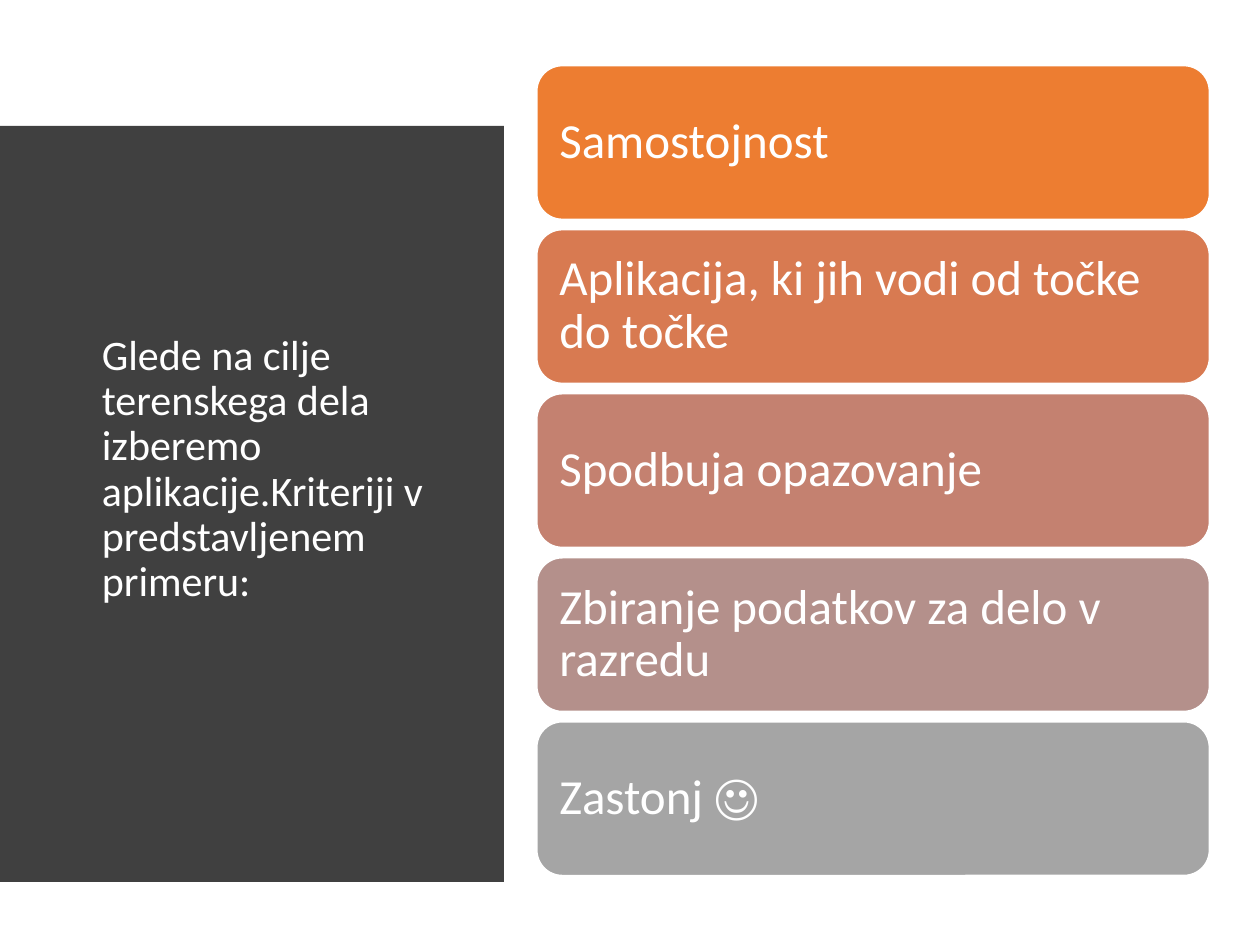
from pptx import Presentation
from pptx.dml.color import RGBColor
from pptx.enum.shapes import MSO_SHAPE
from pptx.enum.text import MSO_ANCHOR, PP_ALIGN
from pptx.util import Inches, Pt

WHITE = RGBColor(0xFF, 0xFF, 0xFF)
DARK = RGBColor(0x40, 0x40, 0x40)
CRITERIA = [
    ("Samostojnost", RGBColor(0xED, 0x7D, 0x31)),
    ("Aplikacija, ki jih vodi od točke do točke", RGBColor(0xD8, 0x7A, 0x51)),
    ("Spodbuja opazovanje", RGBColor(0xC4, 0x81, 0x70)),
    ("Zbiranje podatkov za delo v razredu", RGBColor(0xB4, 0x90, 0x8B)),
    ("Zastonj ☺", RGBColor(0xA5, 0xA5, 0xA5)),
]
TITLE = ("Glede na cilje terenskega dela izberemo aplikacije."
         "Kriteriji v predstavljenem primeru:")


def write(shape, text, size, inset):
    tf = shape.text_frame
    tf.word_wrap = True
    tf.vertical_anchor = MSO_ANCHOR.MIDDLE
    tf.margin_left = tf.margin_right = Inches(inset)
    tf.text = text
    p = tf.paragraphs[0]
    p.alignment = PP_ALIGN.LEFT
    p.line_spacing = 0.9
    font = p.runs[0].font
    font.name, font.size, font.color.rgb = "Calibri", Pt(size), WHITE


def title_panel(slide, left, top, width, height):
    """Dark panel whose right edge bulges along a parabola."""
    bulge, steps = 0.05 * width, 40
    edge = []
    for i in range(steps + 1):
        t = i / steps
        x = left + width - bulge + bulge * 4 * t * (1 - t)
        edge.append((x, top + t * height))
    builder = slide.shapes.build_freeform(left, top, scale=Inches(1))
    builder.add_line_segments(edge + [(left, top + height)], close=True)
    panel = builder.convert_to_shape()
    panel.shadow.inherit = False
    panel.fill.solid()
    panel.fill.fore_color.rgb = DARK
    panel.line.fill.background()

    pad_x, pad_y = 0.31, 0.59
    box = slide.shapes.add_textbox(
        Inches(left + pad_x), Inches(top + pad_y),
        Inches(0.78 * width), Inches(height - 2 * pad_y - 0.02))
    write(box, TITLE, 24, 0.1)


def criteria_list(slide, left, top, width, height, gap=0.08):
    """Equal rounded bars stacked over the height of the box."""
    bar_height = (height + gap) / len(CRITERIA) - gap
    for row, (text, color) in enumerate(CRITERIA):
        bar = slide.shapes.add_shape(
            MSO_SHAPE.ROUNDED_RECTANGLE,
            Inches(left), Inches(top + row * (bar_height + gap)),
            Inches(width), Inches(bar_height))
        bar.shadow.inherit = False
        bar.fill.solid()
        bar.fill.fore_color.rgb = color
        bar.line.color.rgb = WHITE
        bar.line.width = Pt(1)
        write(bar, text, 28, 0.12)


def main():
    prs = Presentation()
    prs.slide_width, prs.slide_height = Inches(10), Inches(7.5)
    slide = prs.slides.add_slide(prs.slide_layouts[6])
    title_panel(slide, 0.4, 0.52, 3.59, 6.44)
    criteria_list(slide, 4.26, 0.52, 5.34, 6.43)
    prs.save("out.pptx")


if __name__ == "__main__":
    main()
